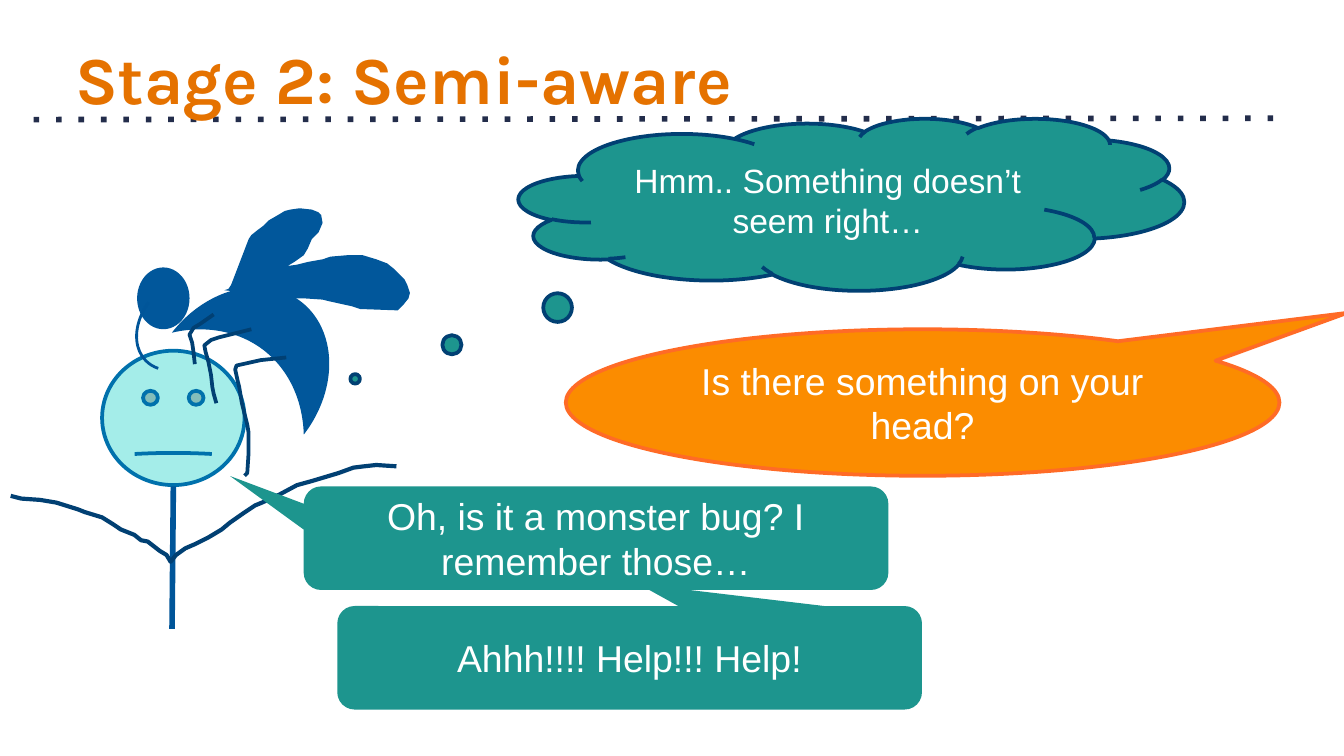
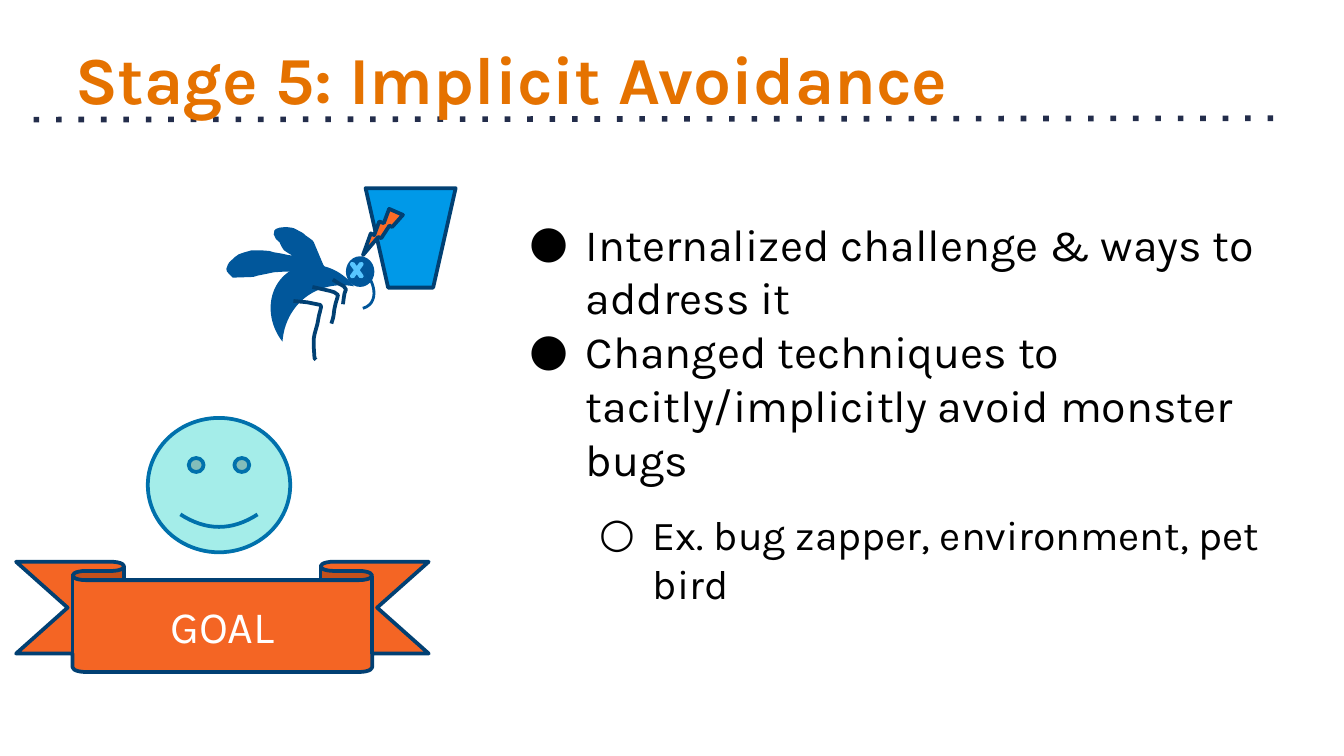
from dataclasses import dataclass

from lxml import etree
from pptx import Presentation
from pptx import util as u
from pptx.dml.color import RGBColor
from pptx.enum import shapes, text
from pptx.oxml.ns import qn

KIND = shapes.MSO_SHAPE


@dataclass(frozen=True)
class Theme:
    orange: str = "E57200"
    navy: str = "232D4B"
    ink: str = "014073"
    blue: str = "01579B"
    stem: str = "005599"
    skin: str = "A4EDE9"
    rim: str = "0071AC"
    teal: str = "1D958E"
    amber: str = "FB8C00"
    coral: str = "FF6B26"
    flag: str = "F46524"
    sky: str = "0099E8"
    glow: str = "58C6FF"
    white: str = "FFFFFF"
    black: str = "000000"
    head: str = "Karla"
    talk: str = "Arial"
    title: int = 36
    body: int = 24
    sub: int = 22
    speech: int = 20
    thought: int = 18


# Bug outlines, in inches on the first slide
WINGS = [
    (1.72, 2.12), (1.85, 1.78), (1.87, 1.75), (1.92, 1.71), (1.96, 1.68),
    (2, 1.64), (2.07, 1.6), (2.12, 1.57), (2.16, 1.56), (2.23, 1.55),
    (2.32, 1.56), (2.37, 1.58), (2.39, 1.6), (2.4, 1.66), (2.37, 1.73),
    (2.32, 1.78), (2.29, 1.85), (2.26, 1.9), (2.19, 1.95), (2.14, 1.98),
    (2.21, 1.97), (2.29, 1.95), (2.4, 1.93), (2.46, 1.91), (2.58, 1.9),
    (2.7, 1.9), (2.8, 1.93), (2.88, 1.96), (2.93, 2), (3.01, 2.08),
    (3.03, 2.12), (3.05, 2.18), (3.04, 2.22), (3, 2.27), (2.96, 2.31),
    (2.68, 2.3), (2.62, 2.28), (2.53, 2.26), (2.44, 2.24), (2.4, 2.23),
    (2.25, 2.22), (2.11, 2.22), (2.02, 2.2), (1.94, 2.18), (1.85, 2.17),
    (1.75, 2.17), (1.67, 2.16), (1.7, 2.15),
]
LEGS = [
    [(2.13, 2.66), (1.94, 2.68), (1.76, 2.72), (1.75, 2.75), (1.77, 2.84),
     (1.78, 2.88), (1.8, 3), (1.82, 3.08), (1.84, 3.16), (1.85, 3.22),
     (1.85, 3.37), (1.84, 3.52), (1.82, 3.54)],
    [(1.87, 2.45), (1.63, 2.51), (1.57, 2.53), (1.52, 2.57), (1.53, 2.62),
     (1.55, 2.69), (1.57, 2.79), (1.58, 2.88), (1.59, 2.93), (1.61, 3)],
    [(1.59, 2.34), (1.49, 2.41), (1.44, 2.44), (1.41, 2.49), (1.43, 2.55),
     (1.44, 2.62), (1.45, 2.71)],
]
ARMS = [
    (0.08, 3.69), (0.16, 3.71), (0.3, 3.72), (0.42, 3.74), (0.58, 3.79),
    (0.63, 3.81), (0.76, 3.85), (0.84, 3.9), (0.9, 3.94), (1, 3.98),
    (1.05, 4.02), (1.1, 4.03), (1.19, 4.1), (1.24, 4.13), (1.27, 4.18),
    (1.31, 4.13), (1.38, 4.08), (1.45, 4.05), (1.55, 4), (1.65, 3.94),
    (1.71, 3.89), (1.81, 3.82), (1.9, 3.76), (1.95, 3.74), (2.08, 3.68),
    (2.21, 3.61), (2.32, 3.58), (2.42, 3.55), (2.52, 3.52), (2.63, 3.48),
    (2.71, 3.47), (2.8, 3.46), (2.95, 3.47),
]


class Deck:
    def __init__(self, theme):
        self.theme = theme
        self.prs = Presentation()
        self.prs.slide_width = u.Inches(10)
        self.prs.slide_height = u.Inches(10) * 9 // 16
        self.pen = None

    def page(self, title):
        """Start a slide with its dotted rule and title."""
        t = self.theme
        slide = self.prs.slides.add_slide(self.prs.slide_layouts[6])
        self.pen = slide.shapes
        rule = self.line((0.25, 0.89), (9.55, 0.88), t.navy, 3)
        dash = etree.SubElement(rule._element.spPr.find(qn("a:ln")), qn("a:prstDash"))
        dash.set("val", "dot")
        frame = self.box(0.46, 0.18, 9.09, 0.69)
        frame.text = title
        self.font(frame.paragraphs[0], t.title, t.head, t.orange, True)

    def font(self, para, size, face, color, bold=False):
        for run in para.runs:
            run.font.size = u.Pt(size)
            run.font.name = face
            run.font.bold = bold
            run.font.color.rgb = RGBColor.from_string(color)

    def box(self, *at):
        frame = self.pen.add_textbox(*map(u.Inches, at)).text_frame
        frame.word_wrap = True
        frame.margin_left = frame.margin_right = u.Inches(0.1)
        frame.margin_top = frame.margin_bottom = u.Inches(0.1)
        return frame

    def paint(self, shape, fill, line, width):
        shape.shadow.inherit = False
        if fill:
            shape.fill.solid()
            shape.fill.fore_color.rgb = RGBColor.from_string(fill)
        else:
            shape.fill.background()
        if line:
            shape.line.color.rgb = RGBColor.from_string(line)
            shape.line.width = u.Pt(width)
        else:
            shape.line.fill.background()

    def shape(self, kind, at, fill=None, line=None, width=2, adj=(), turn=0, flip=False):
        item = self.pen.add_shape(kind, *map(u.Inches, at))
        for i, value in enumerate(adj):
            item.adjustments[i] = value
        item.rotation = turn
        if flip:
            item._element.spPr.find(qn("a:xfrm")).set("flipH", "1")
        self.paint(item, fill, line, width)
        return item

    def label(self, item, words, size, face):
        frame = item.text_frame
        frame.word_wrap = True
        frame.vertical_anchor = text.MSO_ANCHOR.MIDDLE
        frame.text = words
        para = frame.paragraphs[0]
        para.alignment = text.PP_ALIGN.CENTER
        self.font(para, size, face, self.theme.white)

    def line(self, start, end, color, width):
        item = self.pen.add_connector(
            shapes.MSO_CONNECTOR.STRAIGHT, *map(u.Inches, start + end))
        item.line.color.rgb = RGBColor.from_string(color)
        item.line.width = u.Pt(width)
        etree.SubElement(item._element.spPr, qn("a:effectLst"))
        return item

    def trace(self, points, fill=None, line=None, width=2):
        """Draw an outline, closed when it is filled."""
        dots = [(u.Inches(x), u.Inches(y)) for x, y in points]
        form = self.pen.build_freeform(*dots[0])
        form.add_line_segments(dots[1:], close=bool(fill))
        self.paint(form.convert_to_shape(), fill, line, width)

    def face(self, left, top, smile):
        t = self.theme
        self.shape(KIND.SMILEY_FACE, (left, top, 1.06, 1), t.skin, t.rim, adj=[smile])

    def bug(self, left=0.0, top=0.0, wide=1.0, high=1.0, flip=False):
        """Draw the bug, scaled by wide and high and mirrored by flip."""
        t = self.theme
        home = self.pen
        self.pen = home.add_group_shape().shapes
        sign = -1 if flip else 1

        def place(x, y):
            return left + sign * wide * x, top + high * y

        def part(kind, at, turn=0, **style):
            x, y, w, h = at
            mid, row = place(x + w / 2, y + h / 2)
            # A part lying on its side swaps the two scales
            side = 45 <= turn % 180 < 135
            w, h = w * (high if side else wide), h * (wide if side else high)
            self.shape(kind, (mid - w / 2, row - h / 2, w, h),
                       turn=sign * turn % 360, flip=flip, **style)

        part(KIND.MOON, (1.62, 1.93, 0.77, 1.24), 127.7, fill=t.blue, adj=[0.592])
        part(KIND.OVAL, (1.02, 1.99, 0.39, 0.46), fill=t.blue)
        part(KIND.ARC, (1.08, 1.97, 0.61, 0.84), 225.9, line=t.stem, width=1.5,
             adj=[152.854, 204.291])
        self.trace([place(*p) for p in WINGS], t.blue)
        for leg in LEGS:
            self.trace([place(*p) for p in leg], line=t.ink)
        self.pen = home

    def bullets(self, at, items):
        t = self.theme
        frame = self.box(*at)
        for i, (level, words) in enumerate(items):
            para = frame.paragraphs[0] if i == 0 else frame.add_paragraph()
            para.text = words
            para.level = level
            props = para._p.get_or_add_pPr()
            props.set("marL", str(u.Inches(0.5 + 0.5 * level)))
            props.set("indent", str(u.Inches(-0.4 if level else -0.42)))
            tint = etree.SubElement(props, qn("a:buClr"))
            etree.SubElement(tint, qn("a:srgbClr")).set("val", t.black)
            etree.SubElement(props, qn("a:buFont")).set("typeface", t.head)
            etree.SubElement(props, qn("a:buChar")).set("char", "●○"[level])
            if level:
                para.space_before = u.Pt(13)
            self.font(para, t.sub if level else t.body, t.head, t.black)


def aware(deck):
    t = deck.theme
    deck.page("Stage 2: Semi-aware")

    # Person with the bug on the head
    deck.face(0.76, 2.61, -0.004)
    deck.bug()
    deck.line((1.29, 3.62), (1.28, 4.68), t.stem, 3)
    deck.trace(ARMS, line=t.ink, width=2.25)

    # Thought and speech
    bubbles = [
        (KIND.CLOUD_CALLOUT, (3.86, 0.88, 4.95, 1.28), t.teal, t.ink,
         [-0.746, 1.015], "Hmm.. Something doesn’t seem right…", t.thought),
        (KIND.OVAL_CALLOUT, (4.21, 2.45, 5.31, 1.09), t.amber, t.coral,
         [0.595, -0.612], "Is there something on your head?", t.speech),
        (KIND.ROUNDED_RECTANGULAR_CALLOUT, (2.51, 4.51, 4.35, 0.77), t.teal, None,
         [0.015, -0.714, 0.167], "Ahhh!!!! Help!!! Help!", t.speech),
        (KIND.ROUNDED_RECTANGULAR_CALLOUT, (2.26, 3.62, 4.35, 0.77), t.teal, None,
         [-0.626, -0.601, 0.167], "Oh, is it a monster bug? I remember those…", t.speech),
    ]
    for kind, at, fill, line, adj, words, size in bubbles:
        deck.label(deck.shape(kind, at, fill, line, adj=adj), words, size, t.talk)


def avoid(deck):
    t = deck.theme
    deck.page("Stage 5: Implicit Avoidance")
    deck.bullets((3.76, 1.51, 6.2, 1.8), [
        (0, "Internalized challenge & ways to address it"),
        (0, "Changed techniques to tacitly/implicitly avoid monster bugs"),
        (1, "Ex. bug zapper, environment, pet bird"),
    ])

    # Happy face and the zapped bug
    deck.face(1.1, 3.11, 0.047)
    deck.bug(3.34, 0.92, 0.543, 0.496, flip=True)
    deck.shape(KIND.TRAPEZOID, (2.72, 1.4, 0.67, 0.74), t.sky, t.ink, turn=180)
    deck.shape(KIND.LIGHTNING_BOLT, (2.72, 1.51, 0.22, 0.4), t.coral, t.ink, turn=63.3)
    deck.shape(KIND.MATH_MULTIPLY, (2.59, 1.92, 0.13, 0.18), t.blue, t.glow, adj=[0.059])

    # Goal banner
    flag = deck.shape(KIND.DOWN_RIBBON, (0.12, 4.18, 3.07, 0.82), t.flag, t.ink,
                      adj=[0.167, 0.726])
    deck.label(flag, "GOAL", t.body, t.head)


def main():
    deck = Deck(Theme())
    aware(deck)
    avoid(deck)
    deck.prs.save("out.pptx")


if __name__ == "__main__":
    main()
